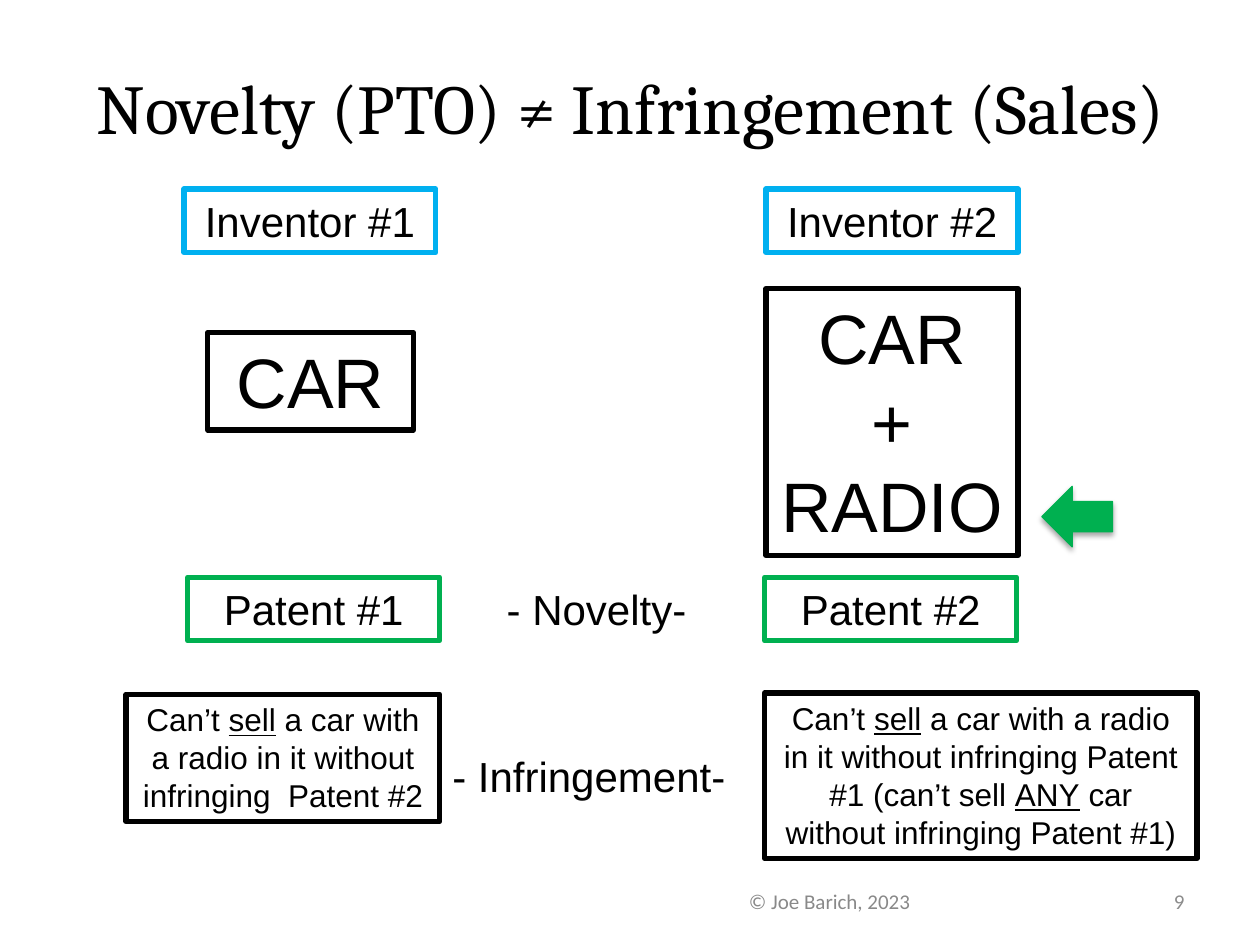
from dataclasses import dataclass

from lxml import etree
from pptx import Presentation
from pptx import util as u
from pptx.dml.color import RGBColor
from pptx.enum import shapes, text
from pptx.oxml.ns import qn


@dataclass(frozen=True)
class Theme:
    ink: str = "000000"
    blue: str = "00B0F0"
    green: str = "00B050"
    foot: str = "898989"
    page: str = "8C8C8C"
    head: str = "Cambria"
    body: str = "Arial"
    small: str = "Calibri"
    huge: int = 40
    large: int = 24
    mid: int = 18
    tiny: int = 12
    edge: float = 3


class Deck:
    """Draws styled text, boxes and arrows on one slide."""

    def __init__(self, theme):
        self.theme = theme
        self.deck = Presentation()
        self.deck.slide_width, self.deck.slide_height = u.Pt(720), u.Pt(540)
        self.slide = self.deck.slides.add_slide(self.deck.slide_layouts[6])

    def words(self, shape, paras, size, font=None, color=None,
              align="CENTER", anchor="TOP", grow=True):
        frame = shape.text_frame
        frame.word_wrap = True
        frame.vertical_anchor = text.MSO_ANCHOR[anchor]
        fit = text.MSO_AUTO_SIZE
        frame.auto_size = fit.SHAPE_TO_FIT_TEXT if grow else fit.NONE
        for i, runs in enumerate(paras):
            para = frame.add_paragraph() if i else frame.paragraphs[0]
            para.alignment = text.PP_ALIGN[align]
            for j, part in enumerate(runs):
                run = para.add_run()
                run.text = part
                run.font.size = u.Pt(size)
                run.font.name = font or self.theme.body
                run.font.color.rgb = RGBColor.from_string(color or self.theme.ink)
                if j % 2:
                    run.font.underline = True

    def label(self, area, line, size, **style):
        shape = self.slide.shapes.add_textbox(*map(u.Pt, area))
        self.words(shape, [[line]], size, **style)

    def shape(self, kind, area, color, width):
        shape = self.slide.shapes.add_shape(kind, *map(u.Pt, area))
        shape.shadow.inherit = False
        shape.line.color.rgb = RGBColor.from_string(color)
        shape.line.width = u.Pt(width)
        return shape

    def box(self, area, paras, size, color=None):
        shape = self.shape(shapes.MSO_SHAPE.RECTANGLE, area,
                           color or self.theme.ink, self.theme.edge)
        shape.fill.background()
        self.words(shape, paras, size)

    def arrow(self, area, color):
        shape = self.shape(shapes.MSO_SHAPE.LEFT_ARROW, area, color, 0.75)
        shape.fill.solid()
        shape.fill.fore_color.rgb = RGBColor.from_string(color)
        shade = etree.SubElement(
            shape._element.spPr.find(qn("a:effectLst")), qn("a:outerShdw"),
            blurRad=str(u.Pt(3.1)), dist=str(u.Pt(1.8)), dir="5400000",
            rotWithShape="0")
        tint = etree.SubElement(shade, qn("a:srgbClr"), val=self.theme.ink)
        etree.SubElement(tint, qn("a:alpha"), val="35000")


def main():
    t = Theme()
    deck = Deck(t)
    deck.label((18, 30.2, 684.7, 61.9), "Novelty (PTO) ≠ Infringement (Sales)",
               t.huge, font=t.head, anchor="MIDDLE", grow=False)
    deck.label((600, 500.4, 84, 28.8), "9", t.tiny, font=t.small,
               color=t.page, align="RIGHT", anchor="MIDDLE", grow=False)

    deck.box((118.8, 190.1, 117.4, 55.7), [["CAR"]], t.huge)
    deck.box((437.8, 164.9, 144, 152.6), [["CAR"], ["+"], ["RADIO"]], t.huge)
    for name, top, color, lefts in (
            ("Inventor", 108, t.blue, (105.1, 437.8)),
            ("Patent", 329.8, t.green, (107.3, 437))):
        for num, left in enumerate(lefts, 1):
            deck.box((left, top, 144, 36.3), [[f"{name} #{num}"]], t.large, color)
    deck.arrow((595.4, 277.9, 40.3, 34.6), t.green)

    deck.box((72, 396.7, 179.3, 72.7),
             [["Can’t ", "sell",
               " a car with a radio in it without infringing  Patent #2"]], t.mid)
    deck.box((437, 396, 247, 94.5),
             [["Can’t ", "sell",
               " a car with a radio in it without infringing Patent #1 (can’t sell ",
               "ANY", " car without infringing Patent #1)"]], t.mid)

    deck.label((272.2, 329.8, 144, 36.3), "- Novelty- ", t.large)
    deck.label((249.1, 425.5, 181.4, 36.3), "- Infringement- ", t.large)
    deck.label((360, 500.4, 228.2, 28.8), "© Joe Barich, 2023", t.tiny,
               font=t.small, color=t.foot, anchor="MIDDLE", grow=False)
    deck.deck.save("out.pptx")


if __name__ == "__main__":
    main()
